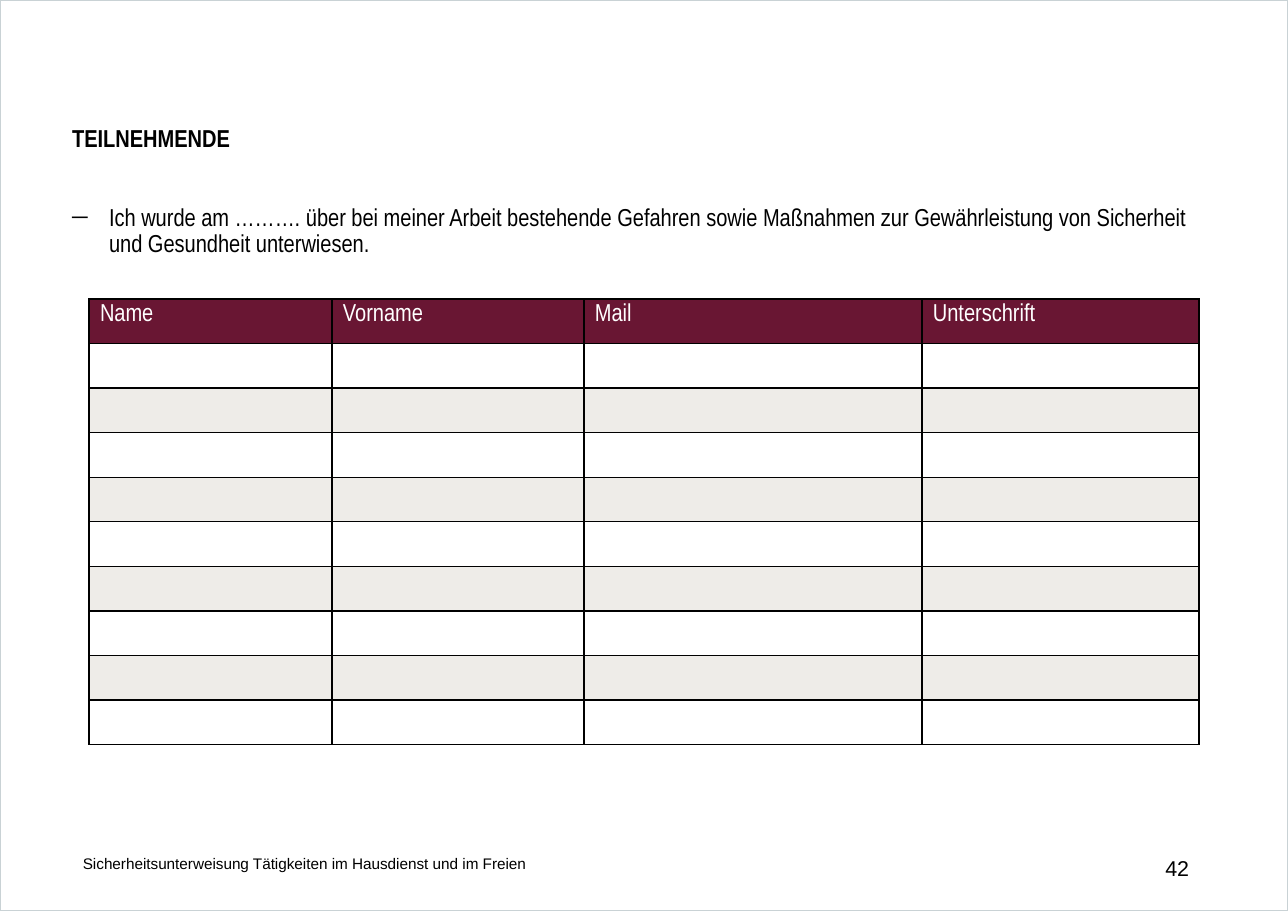
import pptx
import pptx.dml.color
import pptx.enum.shapes
import pptx.enum.text
import pptx.util
from lxml import etree
from pptx.oxml.ns import qn

PX = 914400 / 110.2
BLACK, WHITE, WINE, SAND, FRAME = "000000", "FFFFFF", "691633", "EEECE8", "C9D2D5"
HEADERS = ["Name", "Vorname", "Mail", "Unterschrift"]
COLUMN_WIDTHS = [243, 252, 338, 277]
ROW_COUNT = 10
ANCHOR = pptx.enum.text.MSO_ANCHOR
ALIGN = pptx.enum.text.PP_ALIGN


def px(length):
    """Turn a length in px into EMU."""
    return pptx.util.Emu(round(length * PX))


def color(hex_string):
    """Turn a hex string into a colour."""
    return pptx.dml.color.RGBColor.from_string(hex_string)


def format_runs(paragraph, font_name, size, hex_string, bold=False):
    """Format all runs of a paragraph alike."""
    for run in paragraph.runs:
        run.font.name = font_name
        run.font.size = pptx.util.Pt(size)
        run.font.color.rgb = color(hex_string)
        run.font.bold = bold


def place(shape, box):
    """Move a shape to a box."""
    shape.left, shape.top, shape.width, shape.height = map(px, box)


def add_frame(slide, box):
    """Draw the thin outline around the slide."""
    frame = slide.shapes.add_shape(pptx.enum.shapes.MSO_SHAPE.RECTANGLE, *map(px, box))
    frame.shadow.inherit = False
    frame.fill.background()
    frame.line.color.rgb = color(FRAME)
    frame.line.width = pptx.util.Pt(1)


def fill_placeholder(placeholder, box, text, bold=False):
    """Put one left-aligned paragraph without insets into a placeholder."""
    place(placeholder, box)
    text_frame = placeholder.text_frame
    text_frame.text = text
    text_frame.word_wrap = True
    text_frame.auto_size = pptx.enum.text.MSO_AUTO_SIZE.NONE
    text_frame.vertical_anchor = ANCHOR.TOP
    text_frame.margin_left = text_frame.margin_right = 0
    text_frame.margin_top = text_frame.margin_bottom = 0
    paragraph = text_frame.paragraphs[0]
    paragraph.alignment = ALIGN.LEFT
    paragraph.line_spacing = 0.9
    paragraph.space_before = pptx.util.Pt(0)
    format_runs(paragraph, "Arial Narrow", 16, BLACK, bold)
    return paragraph


def add_dash_bullet(paragraph, indent):
    """Give a paragraph a hanging dash."""
    properties = paragraph._p.get_or_add_pPr()
    properties.set("marL", str(px(indent)))
    properties.set("indent", str(-px(indent)))
    etree.SubElement(properties, qn("a:buSzPct"), val="90000")
    etree.SubElement(properties, qn("a:buFont"), typeface="Arial")
    etree.SubElement(properties, qn("a:buChar"), char="─")


def add_borders(cell):
    """Draw a black line on each side of a cell."""
    properties = cell._tc.get_or_add_tcPr()
    for side in ("a:lnL", "a:lnR", "a:lnT", "a:lnB"):
        line = etree.SubElement(properties, qn(side), w=str(pptx.util.Pt(1)))
        fill = etree.SubElement(line, qn("a:solidFill"))
        etree.SubElement(fill, qn("a:srgbClr"), val=BLACK)


def add_signature_table(slide, box):
    """Draw the list in which participants sign."""
    table = slide.shapes.add_table(ROW_COUNT, len(HEADERS), *map(px, box)).table
    for column, width in zip(table.columns, COLUMN_WIDTHS):
        column.width = px(width)
    for row_index, row in enumerate(table.rows):
        background = WINE if row_index == 0 else (SAND, WHITE)[row_index % 2]
        for cell in row.cells:
            cell.margin_top = cell.margin_bottom = px(5)
            add_borders(cell)
            cell.fill.solid()
            cell.fill.fore_color.rgb = color(background)
    for cell, header in zip(table.rows[0].cells, HEADERS):
        cell.text_frame.text = header
        format_runs(cell.text_frame.paragraphs[0], "Arial Narrow", 16, WHITE)


def add_footer_text(slide, box, text, size, alignment):
    """Write one line of the footer."""
    text_frame = slide.shapes.add_textbox(*map(px, box)).text_frame
    text_frame.text = text
    text_frame.word_wrap = True
    text_frame.vertical_anchor = ANCHOR.MIDDLE
    text_frame.paragraphs[0].alignment = alignment
    format_runs(text_frame.paragraphs[0], "Arial", size, BLACK)


def build_participants_slide(presentation):
    """Build the slide with the participants' list."""
    slide = presentation.slides.add_slide(presentation.slide_layouts[1])
    add_frame(slide, (0, 0, 1288, 911))
    fill_placeholder(slide.shapes.title, (72, 126, 1145, 28), "TEILNEHMENDE", True)
    statement = fill_placeholder(
        slide.placeholders[1], (72, 205, 1145, 60),
        "Ich wurde am ………. über bei meiner Arbeit bestehende Gefahren sowie "
        "Maßnahmen zur Gewährleistung von Sicherheit und Gesundheit unterwiesen.")
    add_dash_bullet(statement, 37)
    add_signature_table(slide, (89, 299, sum(COLUMN_WIDTHS), 446))
    add_footer_text(slide, (72, 844, 774, 39),
                    "Sicherheitsunterweisung Tätigkeiten im Hausdienst und im Freien",
                    10, ALIGN.LEFT)
    add_footer_text(slide, (910, 844, 290, 48), "42", 14, ALIGN.RIGHT)


def main():
    """Create and save the presentation."""
    presentation = pptx.Presentation()
    presentation.slide_width = px(1288)
    presentation.slide_height = px(911)
    build_participants_slide(presentation)
    presentation.save("out.pptx")


if __name__ == "__main__":
    main()
